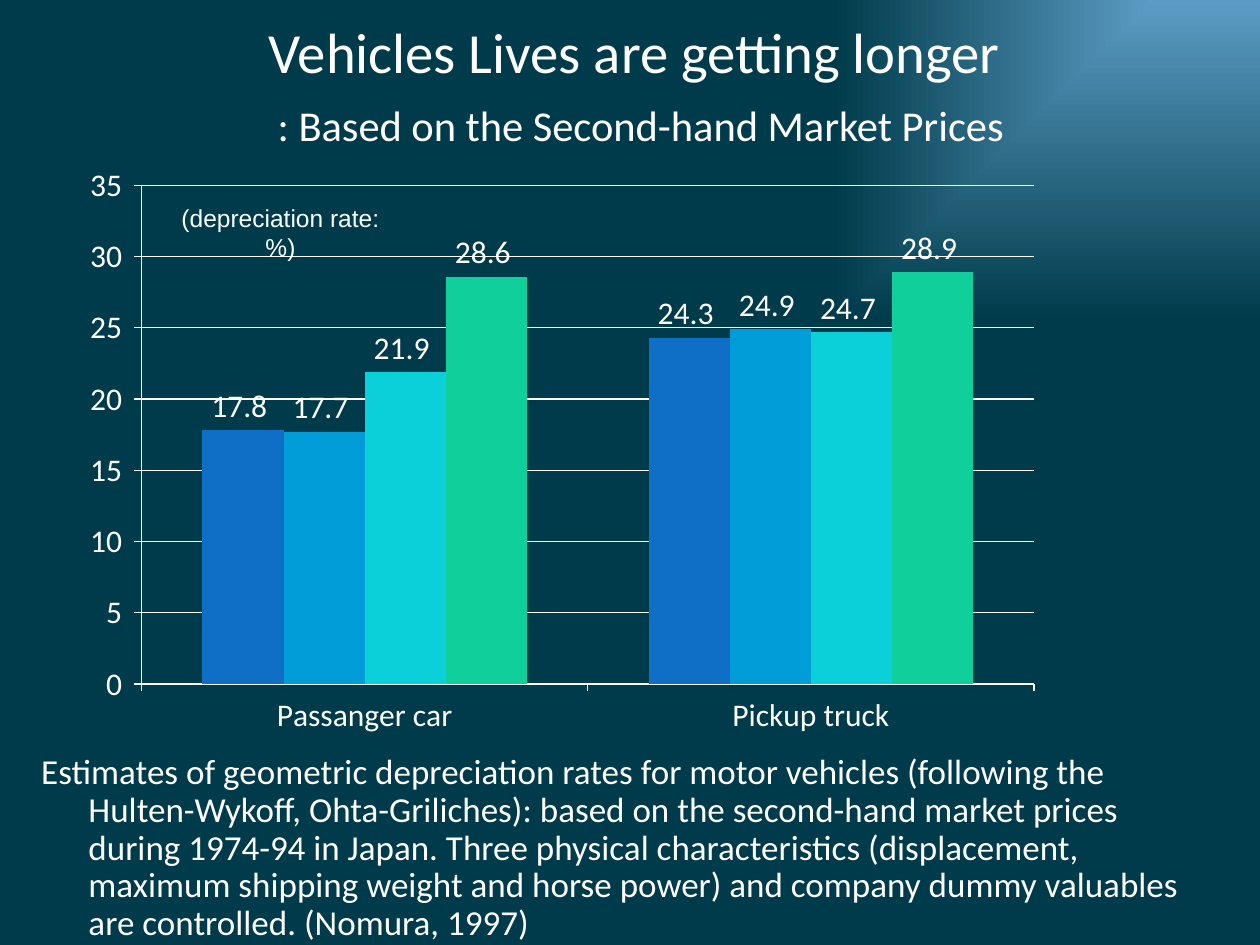
from dataclasses import dataclass

from pptx import Presentation
from pptx.chart.data import CategoryChartData
from pptx.dml.color import RGBColor
from pptx.enum import chart as charts, text
from pptx.oxml import parse_xml
from pptx.oxml.ns import nsdecls, qn
from pptx.util import Pt

WHITE = "FFFFFF"


@dataclass(frozen=True)
class Span:
    words: str
    size: float


@dataclass(frozen=True)
class Caption:
    spans: tuple[Span, ...]
    left: float
    top: float
    width: float
    height: float
    font: str = "Calibri"
    align: text.PP_ALIGN = text.PP_ALIGN.CENTER
    anchor: text.MSO_ANCHOR = text.MSO_ANCHOR.TOP
    hanging: float = 0
    line_spacing: float = 1
    space_before: float = 0


@dataclass(frozen=True)
class Series:
    name: str
    values: tuple[float, ...]
    color: str


CAPTIONS = (
    Caption((Span("Vehicles Lives are getting longer\v ", 32.4),
             Span(": Based on the Second-hand Market Prices", 24.3)),
            11.5, 11.5, 702, 73.5, anchor=text.MSO_ANCHOR.MIDDLE),
    Caption((Span("Estimates of geometric depreciation rates for motor vehicles "
                  "(following the Hulten-Wykoff, Ohta-Griliches): based on the "
                  "second-hand market prices during 1974-94 in Japan. Three physical "
                  "characteristics (displacement, maximum shipping weight and horse "
                  "power) and company dummy valuables are controlled. (Nomura, 1997)", 20),),
            16.5, 427.5, 678.5, 78.5, align=text.PP_ALIGN.LEFT,
            hanging=27, line_spacing=0.9, space_before=4),
    Caption((Span("(depreciation rate:%)", 14),), 90, 112.5, 140.5, 41, font="Arial"),
)
CATEGORIES = ("Passanger car", "Pickup truck")
SERIES = (
    Series("Series 1", (17.8, 24.3), "0F6FC6"),
    Series("Series 2", (17.7, 24.9), "009DD9"),
    Series("Series 3", (21.9, 24.7), "0BD0D9"),
    Series("Series 4", (28.6, 28.9), "10CF9B"),
)
PLOT_AREA = {"x": 0.064, "y": 0.062, "w": 0.789, "h": 0.805}


def rgb(color: str) -> RGBColor:
    return RGBColor.from_string(color)


def style_font(font, name: str, size: float | None = None) -> None:
    font.name = name
    font.color.rgb = rgb(WHITE)
    if size:
        font.size = Pt(size)


def paint_background(page) -> None:
    """Light glow in the top right corner, fading to dark teal."""
    fill = page.background.fill
    fill.gradient()
    for stop, (position, color) in zip(fill.gradient_stops, ((0, "5C9CC4"), (0.68, "003B4B"))):
        stop.position = position
        stop.color.rgb = rgb(color)
    gradient = page.element.find(".//" + qn("a:gradFill"))
    corner = parse_xml(f'<a:path {nsdecls("a")} path="rect">'
                       '<a:fillToRect l="100000" b="100000"/></a:path>')
    gradient.replace(gradient.find(qn("a:lin")), corner)


def add_caption(page, caption: Caption) -> None:
    box = page.shapes.add_textbox(Pt(caption.left), Pt(caption.top),
                                  Pt(caption.width), Pt(caption.height))
    frame = box.text_frame
    frame.word_wrap = True
    frame.vertical_anchor = caption.anchor
    para = frame.paragraphs[0]
    para.alignment = caption.align
    para.line_spacing = caption.line_spacing
    para.space_before = Pt(caption.space_before)
    if caption.hanging:
        properties = para._p.get_or_add_pPr()
        properties.set("marL", str(Pt(caption.hanging)))
        properties.set("indent", str(-Pt(caption.hanging)))
    same_size = len({span.size for span in caption.spans}) == 1
    style_font(para.font, caption.font, caption.spans[0].size if same_size else None)
    for span in caption.spans:
        # A vertical tab stands for a line break
        for index, words in enumerate(span.words.split("\v")):
            if index:
                para.add_line_break()
            run = para.add_run()
            run.text = words
            if not same_size:
                run.font.size = Pt(span.size)


def style_axis(axis) -> None:
    axis.major_tick_mark = charts.XL_TICK_MARK.OUTSIDE
    axis.format.line.color.rgb = rgb(WHITE)
    axis.format.line.width = Pt(0.75)


def add_rate_chart(page) -> None:
    data = CategoryChartData()
    data.categories = CATEGORIES
    for series in SERIES:
        data.add_series(series.name, series.values)
    chart = page.shapes.add_chart(charts.XL_CHART_TYPE.COLUMN_CLUSTERED, Pt(39.5), Pt(84),
                                  Pt(646.5), Pt(354), data).chart
    chart.has_legend = False
    chart.has_title = False
    style_font(chart.font, "Calibri", 18)

    # Axes and gridlines
    style_axis(chart.category_axis)
    values = chart.value_axis
    style_axis(values)
    values.minimum_scale, values.maximum_scale, values.major_unit = 0, 35, 5
    values.tick_labels.number_format = "0_ "
    values.tick_labels.number_format_is_linked = False
    values.major_gridlines.format.line.color.rgb = rgb(WHITE)
    values.major_gridlines.format.line.width = Pt(0.75)

    # Columns with their values on top
    plot = chart.plots[0]
    plot.gap_width, plot.overlap = 150, 0
    plot.vary_by_categories = False
    for column, series in zip(plot.series, SERIES):
        column.format.fill.solid()
        column.format.fill.fore_color.rgb = rgb(series.color)
        labels = column.data_labels
        labels.show_value = True
        labels.number_format = "0.0_ "
        labels.number_format_is_linked = False
        labels.position = charts.XL_LABEL_POSITION.OUTSIDE_END

    # Fixed inner plot area
    area = chart._chartSpace.find(".//" + qn("c:plotArea"))
    for layout in area.findall(qn("c:layout")):
        area.remove(layout)
    modes = "".join(f'<c:{side}Mode val="edge"/>' for side in "xy")
    sizes = "".join(f'<c:{side} val="{share}"/>' for side, share in PLOT_AREA.items())
    area.insert(0, parse_xml(f'<c:layout {nsdecls("c")}><c:manualLayout>'
                             f'<c:layoutTarget val="inner"/>{modes}{sizes}'
                             '</c:manualLayout></c:layout>'))


def main() -> None:
    deck = Presentation()
    deck.slide_width, deck.slide_height = Pt(720), Pt(540)
    page = deck.slides.add_slide(deck.slide_layouts[6])
    paint_background(page)
    add_rate_chart(page)
    for caption in CAPTIONS:
        add_caption(page, caption)
    deck.save("out.pptx")


if __name__ == "__main__":
    main()
